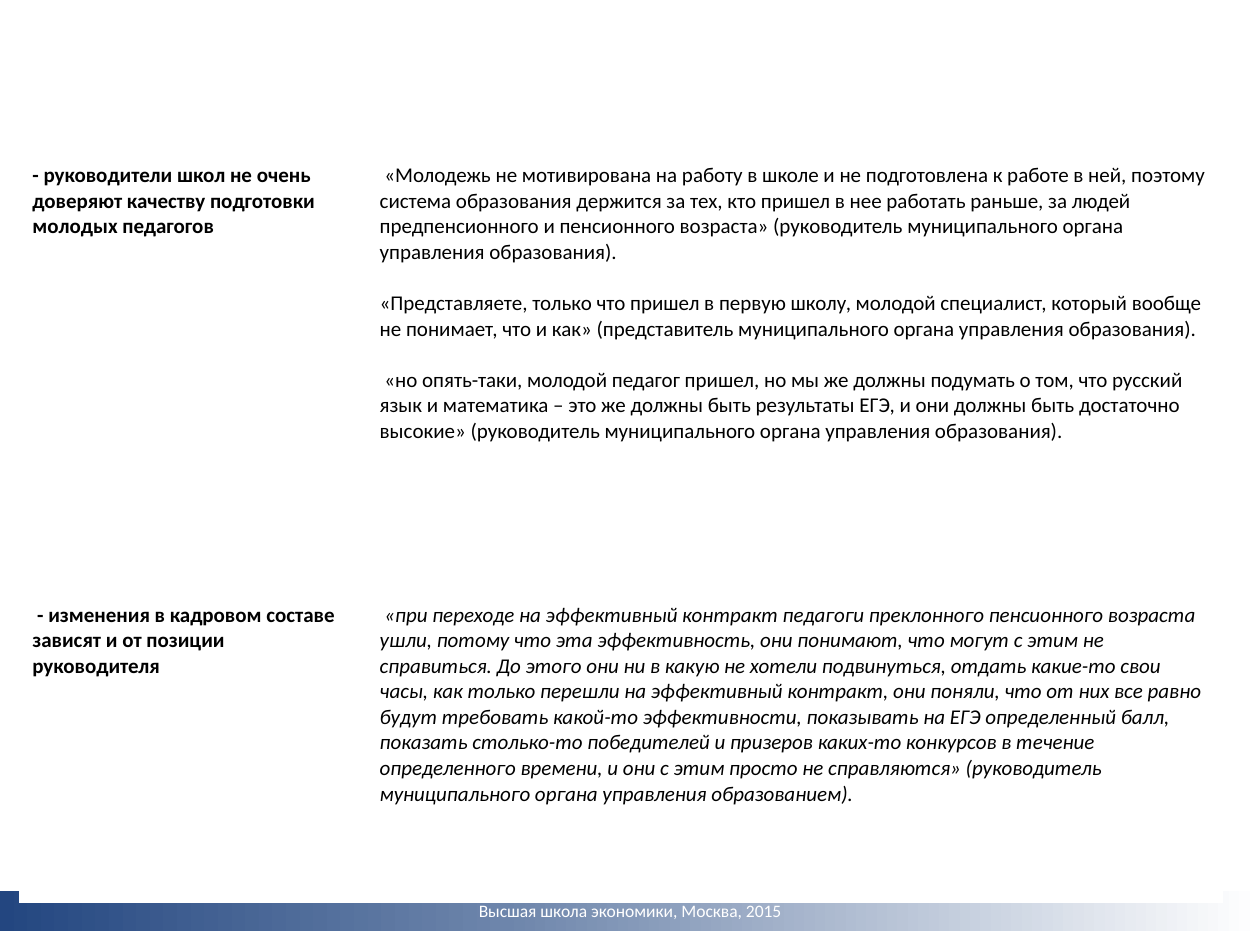
import copy

import lxml.etree
import pptx
import pptx.dml.color
import pptx.enum.shapes
import pptx.enum.text
import pptx.oxml.ns
import pptx.util

Cm = pptx.util.Cm
Pt = pptx.util.Pt
RGBColor = pptx.dml.color.RGBColor
qn = pptx.oxml.ns.qn

NAVY = RGBColor(0x23, 0x46, 0x80)
STEEL = RGBColor(0x6D, 0x85, 0xAB)
WHITE = RGBColor(0xFF, 0xFF, 0xFF)
BLACK = RGBColor(0x00, 0x00, 0x00)

FOOTER = "Высшая школа экономики, Москва, 2015"
# Each row: height in cm, bottom border in points, finding, quotes, quotes in italics
ROWS = [
    (8.86, 3,
     "- руководители школ не очень доверяют качеству подготовки молодых педагогов",
     [" «Молодежь не мотивирована на работу в школе и не подготовлена к работе в ней, "
      "поэтому система образования держится за тех, кто пришел в нее работать раньше, "
      "за людей предпенсионного и пенсионного возраста» (руководитель муниципального "
      "органа управления образования).",
      "«Представляете, только что пришел в первую школу, молодой специалист, который "
      "вообще не понимает, что и как» (представитель муниципального органа управления "
      "образования).",
      " «но опять-таки, молодой педагог пришел, но мы же должны подумать о том, что "
      "русский язык и математика – это же должны быть результаты ЕГЭ, и они должны быть "
      "достаточно высокие» (руководитель муниципального органа управления образования)."],
     False),
    (6.17, 1,
     " - изменения в кадровом составе зависят и от позиции руководителя",
     [" «при переходе на эффективный контракт педагоги преклонного пенсионного возраста "
      "ушли, потому что эта эффективность, они понимают, что могут с этим не справиться. "
      "До этого они ни в какую не хотели подвинуться, отдать какие-то свои часы, как "
      "только перешли на эффективный контракт, они поняли, что от них все равно будут "
      "требовать какой-то эффективности, показывать на ЕГЭ определенный балл, показать "
      "столько-то победителей и призеров каких-то конкурсов в течение определенного "
      "времени, и они с этим просто не справляются» (руководитель муниципального органа "
      "управления образованием)."],
     True),
]


class SlideBuilder:
    font_name = "Calibri"
    body_size = 12
    footer_size = 10
    quote_gap = 14.65  # one line of body text

    def __init__(self, slide):
        self.slide = slide

    def add_run(self, paragraph, text, size, color, bold=False, italic=False):
        run = paragraph.add_run()
        run.text = text
        run.font.name = self.font_name
        run.font.size = Pt(size)
        run.font.color.rgb = color
        run.font.bold = bold
        run.font.italic = italic

    def add_gradient_band(self, left, top, width, height, stops):
        """Draw a bar whose colours run from left to right."""
        band = self.slide.shapes.add_shape(
            pptx.enum.shapes.MSO_SHAPE.RECTANGLE, left, top, width, height)
        band.shadow.inherit = False
        band.line.fill.background()
        band.fill.gradient()
        band.fill.gradient_angle = 0
        stop_list = band.fill._fill._gradFill.find(qn("a:gsLst"))
        while len(stop_list) < len(stops):
            stop_list.append(copy.deepcopy(stop_list[0]))
        for stop, (position, color) in zip(band.fill.gradient_stops, stops):
            stop.position = position
            stop.color.rgb = color

    def add_footer(self, left, top, width, height, text):
        footer = self.slide.shapes.add_textbox(left, top, width, height)
        frame = footer.text_frame
        frame.word_wrap = True
        frame.vertical_anchor = pptx.enum.text.MSO_ANCHOR.MIDDLE
        paragraph = frame.paragraphs[0]
        paragraph.alignment = pptx.enum.text.PP_ALIGN.CENTER
        self.add_run(paragraph, text, self.footer_size, WHITE)

    def set_borders(self, cell, bottom):
        properties = cell._tc.get_or_add_tcPr()
        widths = {"a:lnL": 1, "a:lnR": 1, "a:lnT": 1, "a:lnB": bottom}
        for index, (tag, width) in enumerate(widths.items()):
            line = lxml.etree.Element(qn(tag), w=str(Pt(width)))
            fill = lxml.etree.SubElement(line, qn("a:solidFill"))
            lxml.etree.SubElement(fill, qn("a:srgbClr"), val=str(WHITE))
            properties.insert(index, line)

    def fill_cell(self, cell, texts, bottom, bold=False, italic=False):
        cell.fill.solid()
        cell.fill.fore_color.rgb = WHITE
        self.set_borders(cell, bottom)
        frame = cell.text_frame
        for index, text in enumerate(texts):
            paragraph = frame.add_paragraph() if index else frame.paragraphs[0]
            if index:
                paragraph.space_before = Pt(self.quote_gap)
            self.add_run(paragraph, text, self.body_size, BLACK, bold, italic)

    def add_quote_table(self, left, top, column_widths, rows):
        height = sum(Cm(row[0]) for row in rows)
        table = self.slide.shapes.add_table(
            len(rows), len(column_widths), left, top, sum(column_widths), height).table
        table.first_row = False
        table.horz_banding = False
        for column, width in zip(table.columns, column_widths):
            column.width = width
        for row, (row_height, bottom, finding, quotes, italic) in zip(table.rows, rows):
            row.height = Cm(row_height)
            self.fill_cell(row.cells[0], [finding], bottom, bold=True)
            self.fill_cell(row.cells[1], quotes, bottom, italic=italic)


def main():
    presentation = pptx.Presentation()
    presentation.slide_width = Cm(25.4)
    presentation.slide_height = Cm(19.05)
    slide = presentation.slides.add_slide(presentation.slide_layouts[6])
    builder = SlideBuilder(slide)
    width = presentation.slide_width
    builder.add_gradient_band(Cm(0), Cm(17.96), width, Cm(0.81),
                              [(0, NAVY), (0.4, STEEL), (1, WHITE)])
    builder.add_footer(Cm(0), Cm(18.02), width, Cm(0.69), FOOTER)
    builder.add_quote_table(Cm(0.4), Cm(3.15), [Cm(7), Cm(17.24)], ROWS)
    presentation.save("out.pptx")


if __name__ == "__main__":
    main()
